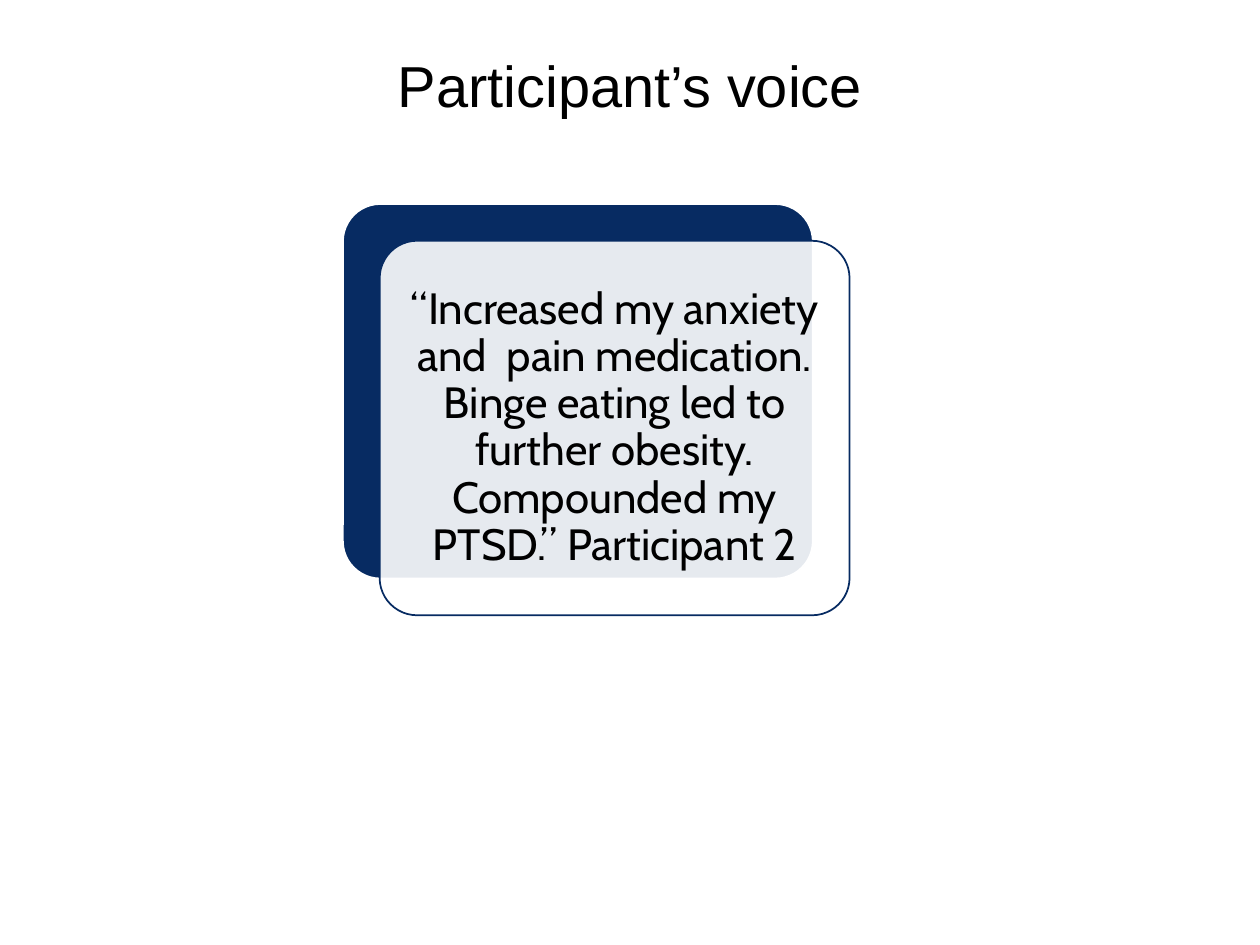
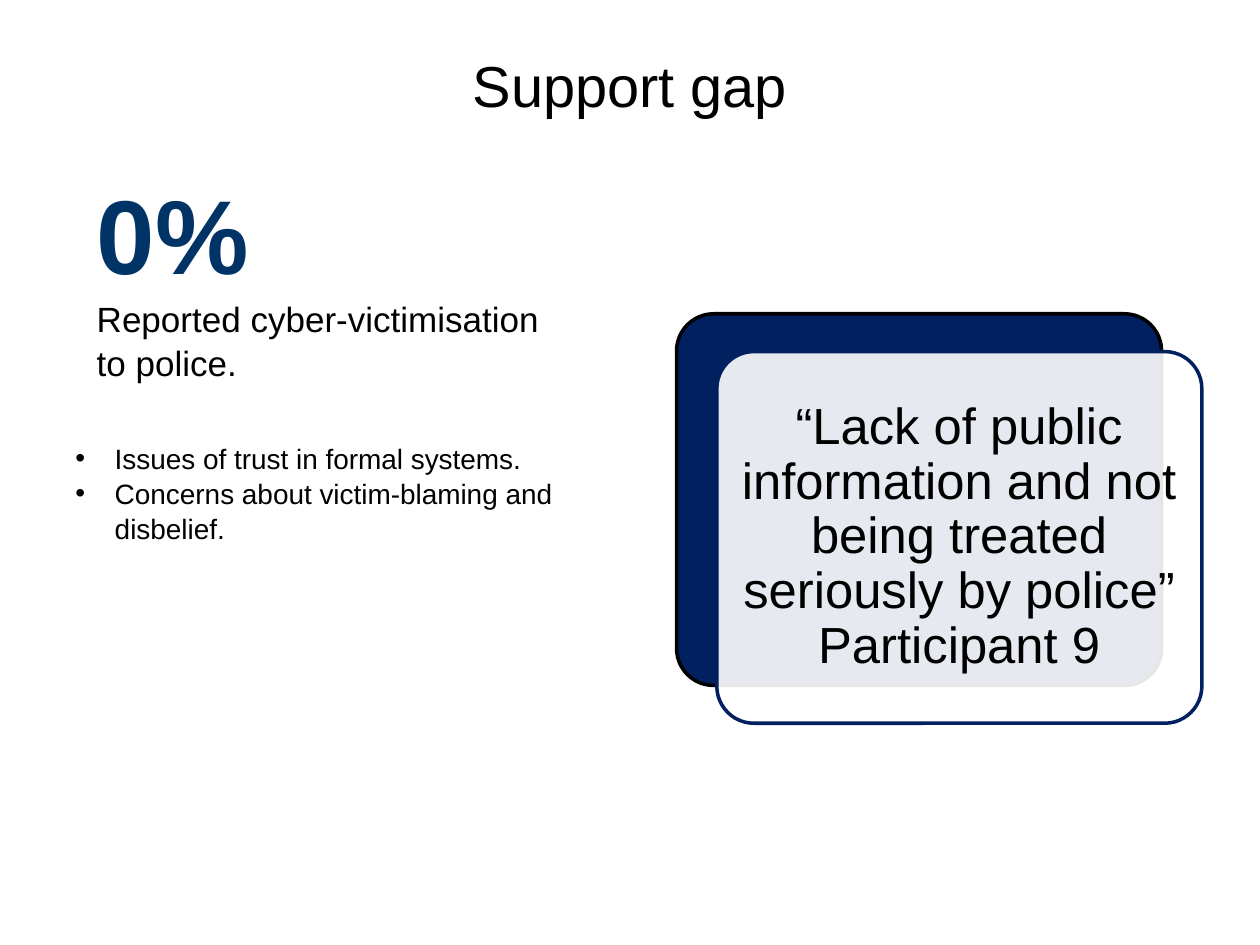
from lxml import etree
from pptx import Presentation
from pptx.dml.color import RGBColor
from pptx.enum import shapes, text
from pptx.oxml import ns
from pptx.util import Pt

BLACK = RGBColor(0, 0, 0)
WHITE = RGBColor(255, 255, 255)
NAVY = RGBColor(0x07, 0x2B, 0x62)
DEEP_NAVY = RGBColor(0x00, 0x20, 0x60)
STAT_BLUE = RGBColor(0x00, 0x33, 0x66)

BODY_FONT = "Arial"
QUOTE_FONT = "Cabin"
LOOSE = 1.05


def style(paragraph, size, color=BLACK, font=BODY_FONT, bold=False):
    for run in paragraph.runs:
        run.font.name = font
        run.font.size = Pt(size)
        run.font.bold = bold
        run.font.color.rgb = color


def add_text_frame(slide, box):
    frame = slide.shapes.add_textbox(*(Pt(length) for length in box)).text_frame
    frame.word_wrap = True
    return frame


def add_title(slide, wording):
    frame = add_text_frame(slide, (36, 21.4, 648, 90))
    frame.margin_top = Pt(7.2)
    frame.text = wording
    frame.paragraphs[0].alignment = text.PP_ALIGN.CENTER
    style(frame.paragraphs[0], 33)


def add_card(slide, box, fill, line, line_width):
    card = slide.shapes.add_shape(
        shapes.MSO_SHAPE.ROUNDED_RECTANGLE, *(Pt(length) for length in box))
    card.adjustments[0] = 0.1
    card.shadow.inherit = False
    card.fill.solid()
    card.fill.fore_color.rgb = fill
    card.line.color.rgb = line
    card.line.width = Pt(line_width)
    return card


def add_quote(slide, box, offset, wording, color, back_line, line_width, size, font):
    """Solid card with a translucent card, holding the quote, shifted over it."""
    left, top, width, height = box
    add_card(slide, box, color, back_line, line_width)
    front = add_card(slide, (left + offset[0], top + offset[1], width, height),
                     WHITE, color, line_width)

    # Let the solid card show through the front one
    tint = front.fill._xPr.find(ns.qn("a:solidFill"))[0]
    etree.SubElement(tint, ns.qn("a:alpha"), val="90000")

    frame = front.text_frame
    frame.word_wrap = True
    frame.vertical_anchor = text.MSO_ANCHOR.MIDDLE
    frame.margin_left = frame.margin_right = Pt(7.2)
    frame.margin_top = frame.margin_bottom = Pt(7.2)
    frame.text = wording
    quote = frame.paragraphs[0]
    quote.alignment = text.PP_ALIGN.CENTER
    quote.line_spacing = 0.9
    style(quote, size, font=font)


def add_statistic(slide, box, figure, caption):
    frame = add_text_frame(slide, box)
    frame.vertical_anchor = text.MSO_ANCHOR.BOTTOM
    frame.text = figure
    style(frame.paragraphs[0], 60, STAT_BLUE, bold=True)
    explanation = frame.add_paragraph()
    explanation.text = caption
    style(explanation, 20)
    for paragraph in frame.paragraphs:
        paragraph.line_spacing = LOOSE


def add_reasons(slide, box, reasons):
    frame = add_text_frame(slide, box)
    frame.text = "\n".join(reasons)
    for reason in frame.paragraphs:
        reason.line_spacing = LOOSE
        properties = reason._p.get_or_add_pPr()
        properties.set("marL", str(Pt(22.5)))
        properties.set("indent", str(-Pt(22.5)))
        etree.SubElement(properties, ns.qn("a:buFont"), typeface=BODY_FONT)
        etree.SubElement(properties, ns.qn("a:buChar"), char="•")
        style(reason, 16)


def build_voice_slide(slide):
    add_title(slide, "Participant’s voice")
    add_quote(slide, (196, 116.6, 268.5, 214), (21, 21),
              "“Increased my anxiety and  pain medication. Binge eating led to "
              "further obesity. Compounded my PTSD.” Participant 2",
              NAVY, WHITE, 1, 25, QUOTE_FONT)


def build_support_slide(slide):
    add_title(slide, "Support gap")
    add_quote(slide, (386.6, 179.3, 277.2, 212.4), (23, 21.6),
              "“Lack of public information and not being treated seriously "
              "by police” Participant 9",
              DEEP_NAVY, BLACK, 2, 29, BODY_FONT)
    add_statistic(slide, (48.2, 94.3, 323.3, 128.2), "0%",
                  "Reported cyber-victimisation\vto police.")
    add_reasons(slide, (36, 247.7, 321.8, 65.5),
                ["Issues of trust in formal systems.",
                 "Concerns about victim-blaming and disbelief."])


def main():
    deck = Presentation()
    deck.slide_width, deck.slide_height = Pt(720), Pt(540)
    blank = deck.slide_layouts[6]
    for build in (build_voice_slide, build_support_slide):
        build(deck.slides.add_slide(blank))
    deck.save("out.pptx")


if __name__ == "__main__":
    main()
